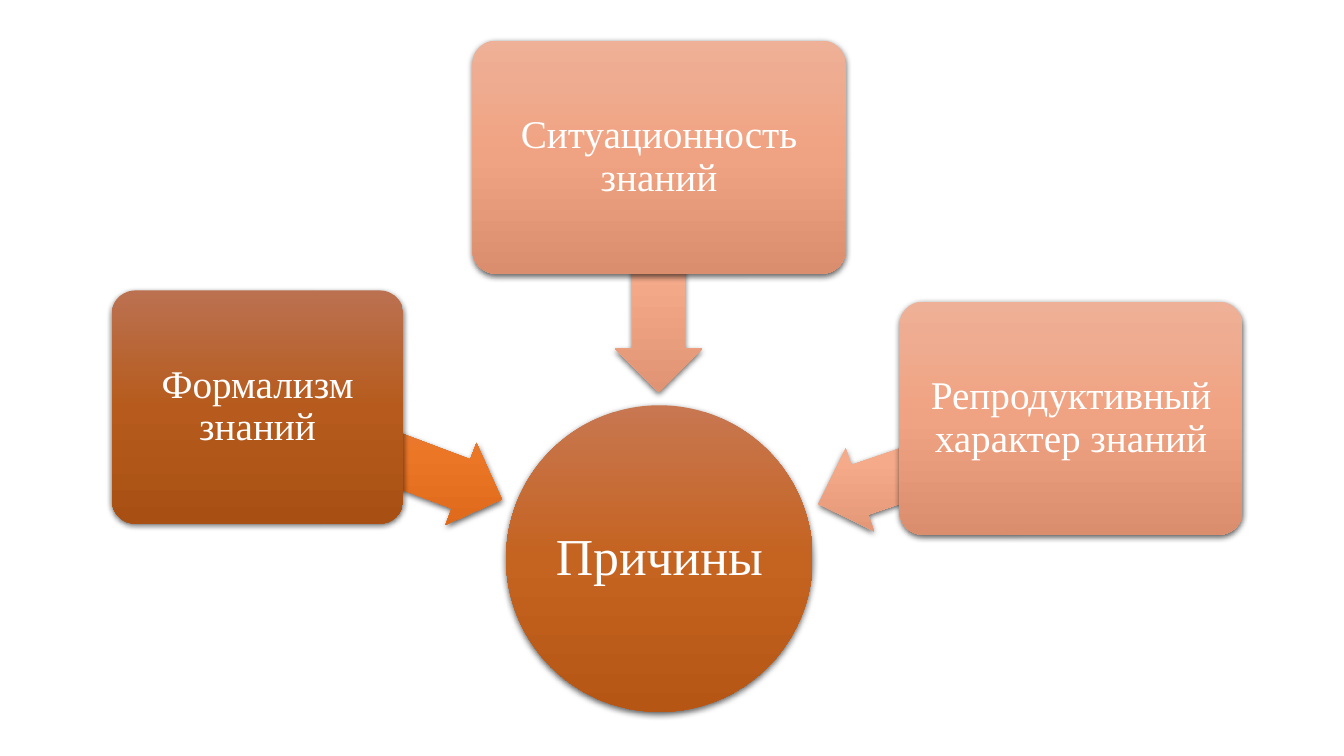
from pptx import Presentation
from pptx.dml.color import RGBColor
from pptx.enum.shapes import MSO_SHAPE as SHAPE
from pptx.enum.text import MSO_ANCHOR, PP_ALIGN
from pptx.oxml import parse_xml
from pptx.oxml.ns import nsdecls, qn
from pptx.util import Pt

WHITE = RGBColor(0xFF, 0xFF, 0xFF)
# Gradients from top to bottom
RUST = RGBColor(0xC8, 0x77, 0x51), RGBColor(0xC5, 0x63, 0x20), RGBColor(0xB6, 0x56, 0x15)
BROWN = RGBColor(0xBB, 0x71, 0x50), RGBColor(0xB6, 0x5B, 0x1D), RGBColor(0xA8, 0x50, 0x14)
ORANGE = RGBColor(0xE7, 0x87, 0x56), RGBColor(0xEB, 0x76, 0x26), RGBColor(0xDB, 0x67, 0x18)
PEACH = RGBColor(0xF3, 0xB6, 0x9D), RGBColor(0xF5, 0xAA, 0x8A), RGBColor(0xE0, 0x94, 0x74)
SALMON = RGBColor(0xEE, 0xB0, 0x97), RGBColor(0xF0, 0xA3, 0x82), RGBColor(0xDB, 0x8E, 0x6E)

FONT = "Times New Roman"
BOX_HEIGHT = 166.5
ARROW_WIDTH = 62.5

prs = Presentation()
prs.slide_width, prs.slide_height = Pt(960), Pt(540)
slide = prs.slides.add_slide(prs.slide_layouts[6])


def add_part(kind, left, top, width, height, gradient):
    """Add a borderless shape with an upright gradient and a soft shadow."""
    part = slide.shapes.add_shape(kind, Pt(left), Pt(top), Pt(width), Pt(height))
    part.line.fill.background()
    part.shadow.inherit = False
    properties = part._element.spPr
    stops = "".join(
        f'<a:gs pos="{i * 50000}"><a:srgbClr val="{color}"/></a:gs>'
        for i, color in enumerate(gradient))
    properties.find(qn("a:prstGeom")).addnext(parse_xml(
        f'<a:gradFill {nsdecls("a")} rotWithShape="0"><a:gsLst>{stops}</a:gsLst>'
        '<a:lin ang="5400000" scaled="0"/></a:gradFill>'))
    properties.find(qn("a:effectLst")).append(parse_xml(
        f'<a:outerShdw {nsdecls("a")} blurRad="{Pt(4.5)}" dist="{Pt(1.5)}" dir="5400000" '
        'algn="ctr" rotWithShape="0"><a:srgbClr val="000000"><a:alpha val="63000"/>'
        '</a:srgbClr></a:outerShdw>'))
    return part


def add_label(part, text, size, inset):
    frame = part.text_frame
    frame.word_wrap = True
    frame.vertical_anchor = MSO_ANCHOR.MIDDLE
    frame.margin_left = frame.margin_right = Pt(inset)
    frame.margin_top = frame.margin_bottom = Pt(inset)
    paragraph = frame.paragraphs[0]
    paragraph.alignment = PP_ALIGN.CENTER
    paragraph.line_spacing = 0.9
    run = paragraph.add_run()
    run.text = text
    run.font.name = FONT
    run.font.size = Pt(size)
    run.font.color.rgb = WHITE


# Central circle
center = add_part(SHAPE.OVAL, 361.5, 289.5, 219, 219, RUST)
add_label(center, "Причины", 37, 2)

# Causes: text, box (left, top, width), box gradient,
# arrow (left, top, length), arrow rotation, arrow gradient
causes = [
    ("Формализм знаний", (80, 207.5, 208), BROWN, (178, 292.5, 186.5), 200.7, ORANGE),
    ("Ситуационность знаний", (337.5, 29, 266.5), SALMON, (386.5, 165, 168), 270, PEACH),
    ("Репродуктивный характер знаний", (642.5, 215.5, 245), SALMON,
     (579.5, 298, 190), 341.1, PEACH),
]
for text, box_place, box_gradient, arrow_place, rotation, arrow_gradient in causes:
    arrow = add_part(SHAPE.LEFT_ARROW, *arrow_place, ARROW_WIDTH, arrow_gradient)
    arrow.adjustments[0], arrow.adjustments[1] = 0.6, 0.5
    arrow.rotation = rotation

    cause = add_part(SHAPE.ROUNDED_RECTANGLE, *box_place, BOX_HEIGHT, box_gradient)
    cause.adjustments[0] = 0.1
    add_label(cause, text, 28, 4)

prs.save("out.pptx")
